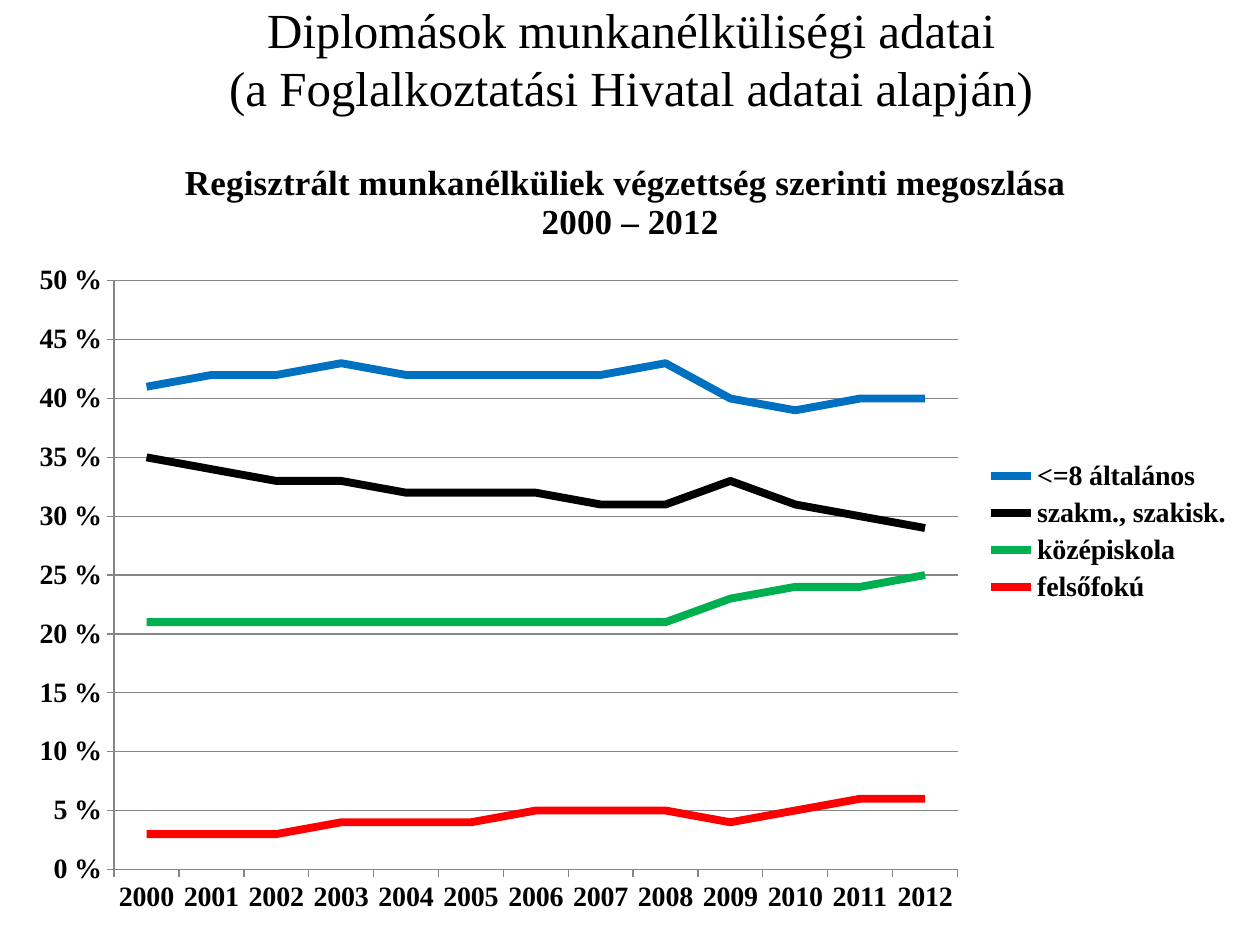
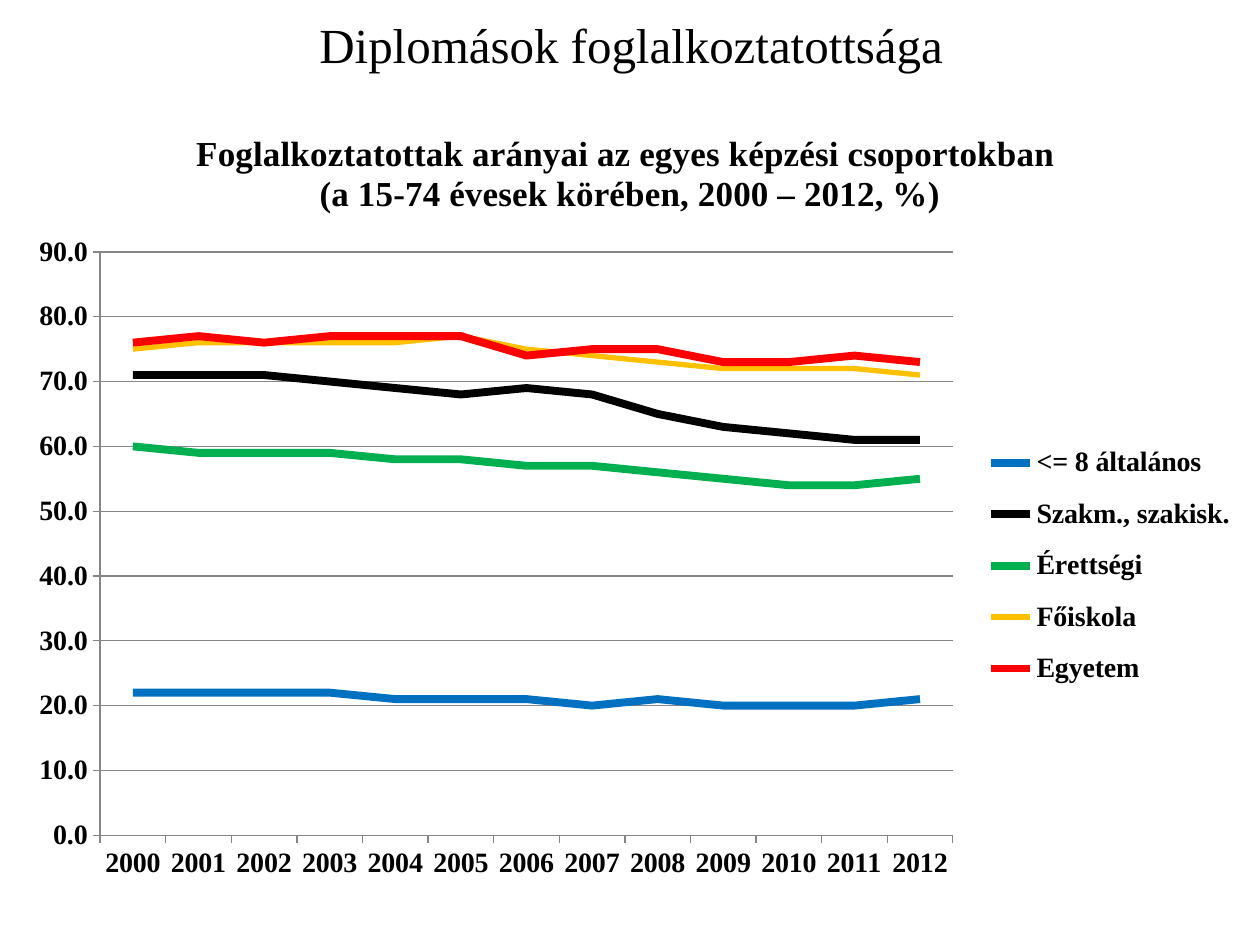
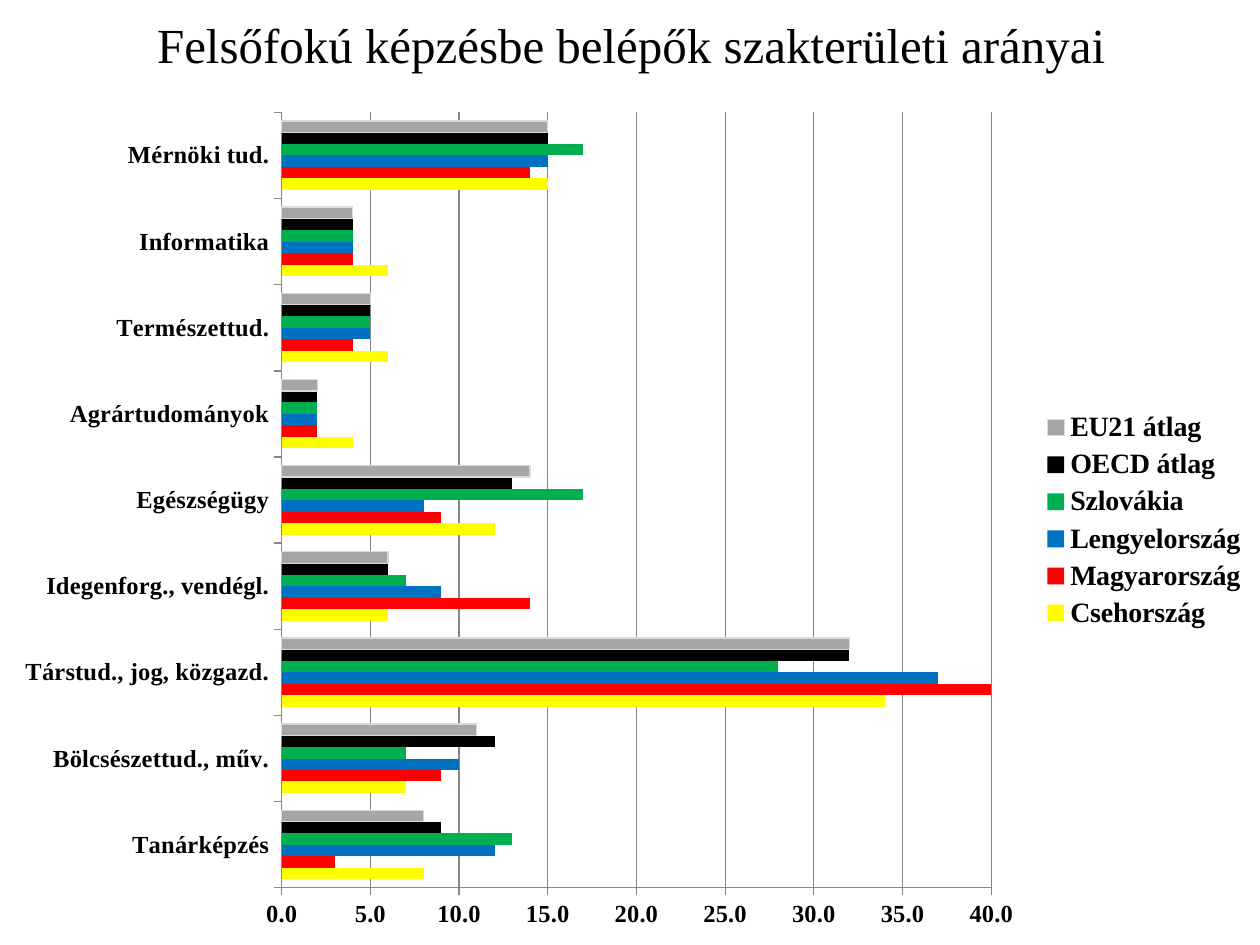
import dataclasses

import pptx
import pptx.chart.data
import pptx.dml.color
import pptx.enum.chart
import pptx.enum.text
import pptx.oxml
import pptx.oxml.ns
import pptx.util

Pt = pptx.util.Pt
ChartType = pptx.enum.chart.XL_CHART_TYPE


@dataclasses.dataclass(frozen=True)
class Theme:
    font: str = "Times New Roman"
    black: str = "000000"
    blue: str = "0070C0"
    green: str = "00B050"
    red: str = "FF0000"
    amber: str = "FFC000"
    yellow: str = "FFFF00"
    grey: str = "A6A6A6"
    pale: str = "D9D9D9"
    axis: str = "868686"
    title_size: float = 28
    chart_title_size: float = 20
    label_size: float = 16
    small_label_size: float = 14
    hairline: float = 0.75
    thin_line: float = 3
    thick_line: float = 4.5


THEME = Theme()
YEARS = [str(year) for year in range(2000, 2013)]
SLIDE_SIZE = (720, 540)
TITLE_BOX = (36.72, 0, 648, 49.68)
TALL_TITLE_BOX = (36.72, 0, 648, 66.24)


# Shared formatting
def rgb(colour):
    return pptx.dml.color.RGBColor.from_string(colour)


def style_font(font, size, bold=True, colour=THEME.black):
    font.name = THEME.font
    font.size = Pt(size)
    font.bold = bold
    font.color.rgb = rgb(colour)


def style_line(line, colour, width):
    line.color.rgb = rgb(colour)
    line.width = Pt(width)


def write_text(frame, text, size, bold=False):
    """Fill a text frame; a vertical tab in the text breaks the line."""
    frame.text = text
    for para in frame.paragraphs:
        para.alignment = pptx.enum.text.PP_ALIGN.CENTER
        for span in para.runs:
            style_font(span.font, size, bold)


def set_layout(element, box, outer, inner=False):
    """Place a chart part at box, both boxes being measured on the slide."""
    for old in element.findall(pptx.oxml.ns.qn("c:layout")):
        element.remove(old)
    left, top, width, height = outer
    shares = {
        "x": (box[0] - left) / width,
        "y": (box[1] - top) / height,
        "w": box[2] / width,
        "h": box[3] / height,
    }
    target = '<c:layoutTarget val="inner"/>' if inner else ""
    modes = '<c:xMode val="edge"/><c:yMode val="edge"/>'
    sizes = "".join(f'<c:{key} val="{share:.4f}"/>' for key, share in shares.items())
    layout = pptx.oxml.parse_xml(
        f'<c:layout {pptx.oxml.ns.nsdecls("c")}>'
        f"<c:manualLayout>{target}{modes}{sizes}</c:manualLayout></c:layout>"
    )
    # In a legend the layout follows the position; in a plot area it is first
    element.insert(0 if inner else 1, layout)


# Page title
def add_title(page, text, box):
    title = page.shapes.title
    title.left, title.top, title.width, title.height = map(Pt, box)
    frame = title.text_frame
    frame.word_wrap = True
    frame.auto_size = pptx.enum.text.MSO_AUTO_SIZE.NONE
    frame.vertical_anchor = pptx.enum.text.MSO_ANCHOR.MIDDLE
    write_text(frame, text, THEME.title_size)


# Chart parts
def style_axes(chart, size, maximum, step, number_format):
    for axis in (chart.category_axis, chart.value_axis):
        style_font(axis.tick_labels.font, size)
        style_line(axis.format.line, THEME.axis, THEME.hairline)
        axis.major_tick_mark = pptx.enum.chart.XL_TICK_MARK.OUTSIDE
        axis.minor_tick_mark = pptx.enum.chart.XL_TICK_MARK.NONE
    chart.category_axis.has_major_gridlines = False
    values = chart.value_axis
    values.minimum_scale, values.maximum_scale, values.major_unit = 0, maximum, step
    values.has_major_gridlines = True
    style_line(values.major_gridlines.format.line, THEME.axis, THEME.hairline)
    values.tick_labels.number_format = number_format
    values.tick_labels.number_format_is_linked = False


def add_legend(chart, box, outer):
    chart.has_legend = True
    legend = chart.legend
    legend.position = pptx.enum.chart.XL_LEGEND_POSITION.RIGHT
    legend.include_in_layout = False
    style_font(legend.font, THEME.label_size)
    if box:
        set_layout(legend._element, box, outer)


def add_chart(page, kind, categories, series, box, plot_box, title=None,
              legend_box=None, label_size=THEME.label_size, **scale):
    data = pptx.chart.data.CategoryChartData(number_format="General")
    data.categories = categories
    for name, _, values in series:
        data.add_series(name, values)
    chart = page.shapes.add_chart(kind, *map(Pt, box), data).chart
    style_font(chart.font, THEME.label_size)
    chart.has_title = title is not None
    if title:
        write_text(chart.chart_title.text_frame, title, THEME.chart_title_size, bold=True)
        chart.chart_title.include_in_layout = False
    style_axes(chart, label_size, **scale)
    add_legend(chart, legend_box, box)
    set_layout(chart._chartSpace.chart.plotArea, plot_box, box, inner=True)
    chart.plots[0].vary_by_categories = False
    return chart


def add_line_chart(page, series, **options):
    chart = add_chart(page, ChartType.LINE, YEARS, series, **options)
    for line, (_, colour, _) in zip(chart.plots[0].series, series):
        line.smooth = False
        width = THEME.thin_line if colour == THEME.amber else THEME.thick_line
        style_line(line.format.line, colour, width)


def add_bar_chart(page, categories, series, **options):
    chart = add_chart(page, ChartType.BAR_CLUSTERED, categories, series, **options)
    chart.plots[0].gap_width = 150
    for bars, (_, colour, _) in zip(chart.plots[0].series, series):
        bars.invert_if_negative = False
        bars.format.fill.solid()
        bars.format.fill.fore_color.rgb = rgb(colour)
        if colour == THEME.grey:
            style_line(bars.format.line, THEME.pale, THEME.hairline)


# Pages
def build_unemployment(page):
    add_title(
        page,
        "Diplomások munkanélküliségi adatai\v(a Foglalkoztatási Hivatal adatai alapján)",
        TALL_TITLE_BOX,
    )
    series = [
        ("<=8 általános", THEME.blue, [41, 42, 42, 43, 42, 42, 42, 42, 43, 40, 39, 40, 40]),
        ("szakm., szakisk.", THEME.black, [35, 34, 33, 33, 32, 32, 32, 31, 31, 33, 31, 30, 29]),
        ("középiskola", THEME.green, [21, 21, 21, 21, 21, 21, 21, 21, 21, 23, 24, 24, 25]),
        ("felsőfokú", THEME.red, [3, 3, 3, 4, 4, 4, 5, 5, 5, 4, 5, 6, 6]),
    ]
    add_line_chart(
        page, series, box=(8.64, 77, 703, 453.6), plot_box=(65.2, 160.5, 482, 336.4),
        title="Regisztrált munkanélküliek végzettség szerinti megoszlása \n2000 – 2012",
        maximum=50, step=5, number_format='0" %"',
    )


def build_employment(page):
    add_title(page, "Diplomások foglalkoztatottsága", TITLE_BOX)
    series = [
        ("<= 8 általános", THEME.blue, [22, 22, 22, 22, 21, 21, 21, 20, 21, 20, 20, 20, 21]),
        ("Szakm., szakisk.", THEME.black, [71, 71, 71, 70, 69, 68, 69, 68, 65, 63, 62, 61, 61]),
        ("Érettségi", THEME.green, [60, 59, 59, 59, 58, 58, 57, 57, 56, 55, 54, 54, 55]),
        ("Főiskola", THEME.amber, [75, 76, 76, 76, 76, 77, 75, 74, 73, 72, 72, 72, 71]),
        ("Egyetem", THEME.red, [76, 77, 76, 77, 77, 77, 74, 75, 75, 73, 73, 74, 73]),
    ]
    add_line_chart(
        page, series, box=(8.64, 60.5, 703, 469.5), plot_box=(57.2, 144, 487.3, 333.4),
        legend_box=(561.5, 244, 146, 158.5),
        title="Foglalkoztatottak arányai az egyes képzési csoportokban \n"
              "(a 15-74 évesek körében, 2000 – 2012, %)",
        maximum=90, step=10, number_format="0.0",
    )


def build_fields(page):
    add_title(page, "Felsőfokú képzésbe belépők szakterületi arányai", TITLE_BOX)
    fields = [
        "Tanárképzés", "Bölcsészettud., műv.", "Társtud., jog, közgazd.",
        "Idegenforg., vendégl.", "Egészségügy", "Agrártudományok",
        "Természettud.", "Informatika", "Mérnöki tud.",
    ]
    series = [
        ("Csehország", THEME.yellow, [8, 7, 34, 6, 12, 4, 6, 6, 15]),
        ("Magyarország", THEME.red, [3, 9, 40, 14, 9, 2, 4, 4, 14]),
        ("Lengyelország", THEME.blue, [12, 10, 37, 9, 8, 2, 5, 4, 15]),
        ("Szlovákia", THEME.green, [13, 7, 28, 7, 17, 2, 5, 4, 17]),
        ("OECD átlag", THEME.black, [9, 12, 32, 6, 13, 2, 5, 4, 15]),
        ("EU21 átlag", THEME.grey, [8, 11, 32, 6, 14, 2, 5, 4, 15]),
    ]
    add_bar_chart(
        page, fields, series, box=(0, 54.7, 720, 485.3), plot_box=(161, 64.2, 405.5, 443.2),
        label_size=THEME.small_label_size,
        maximum=40, step=5, number_format="#,##0.0",
    )


def main():
    deck = pptx.Presentation()
    deck.slide_width, deck.slide_height = map(Pt, SLIDE_SIZE)
    title_only = deck.slide_layouts[5]
    for build in (build_unemployment, build_employment, build_fields):
        build(deck.slides.add_slide(title_only))
    deck.save("out.pptx")


if __name__ == "__main__":
    main()
